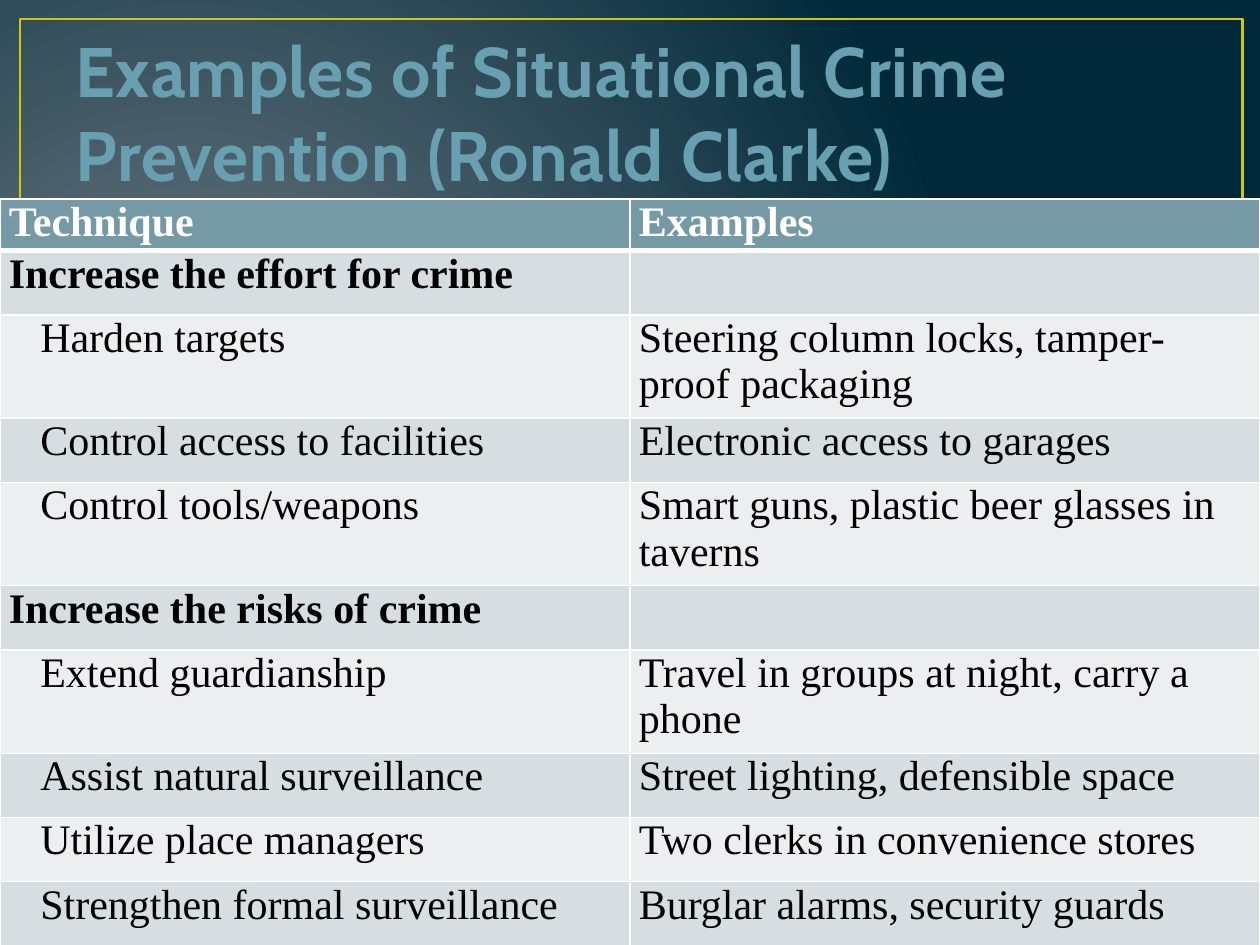
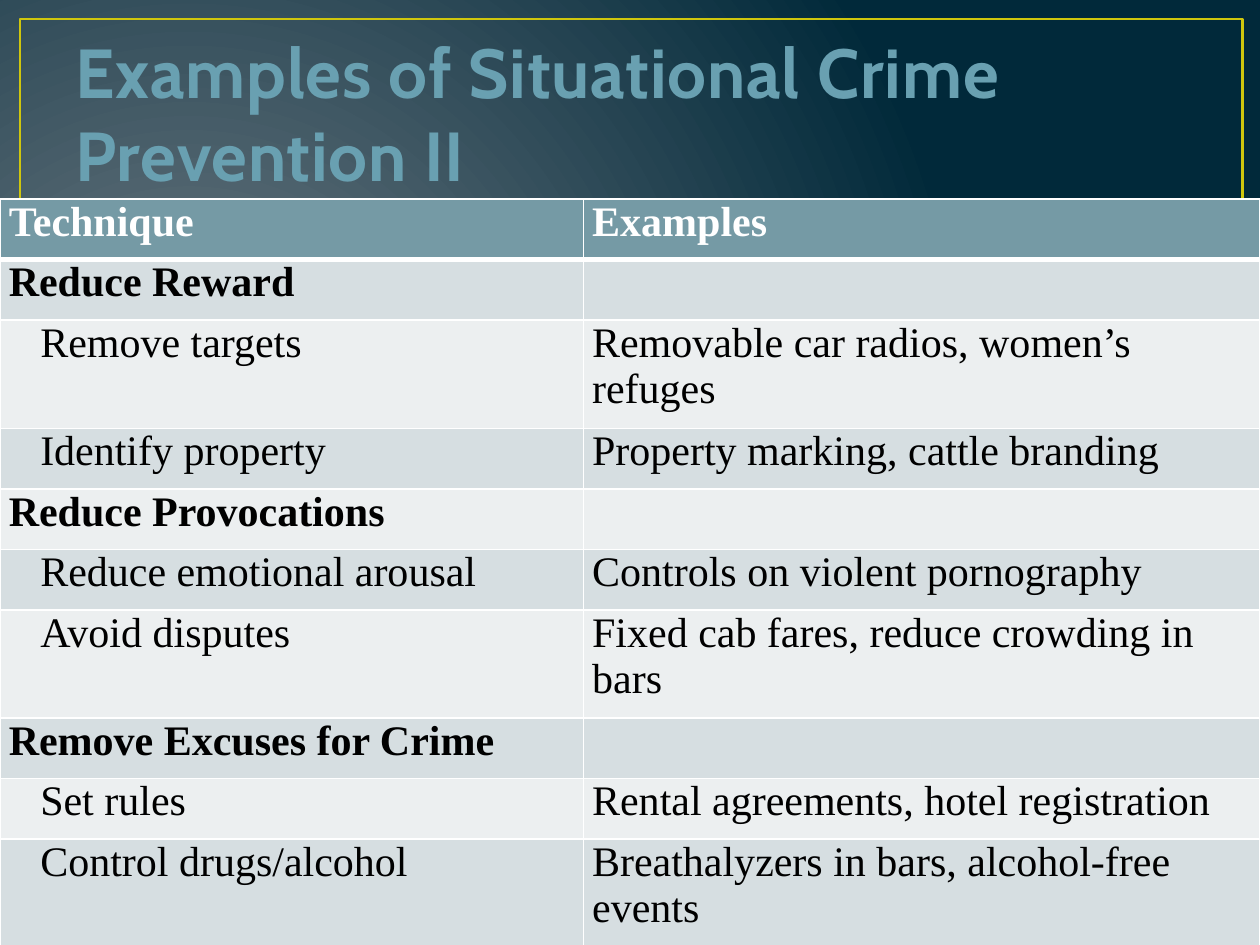
import dataclasses

import lxml.etree
import pptx
import pptx.dml.color
import pptx.enum.shapes
import pptx.enum.text
import pptx.oxml.ns
import pptx.util

Inches = pptx.util.Inches
Pt = pptx.util.Pt
qn = pptx.oxml.ns.qn

COLORS = {
    "glow": "717C84",
    "night": "01293A",
    "frame": "CFC60D",
    "title": "69A0B1",
    "title_edge": "384F55",
    "header": "759AA5",
    "band_dark": "D6DEE1",
    "band_light": "ECEFF0",
    "white": "FFFFFF",
    "black": "000000",
}
TITLE_FONT = "Cabin"
TABLE_FONT = "Times New Roman"
CELL_INSET = 0.07
TECHNIQUE_INDENT = 0.25


@dataclasses.dataclass(frozen=True)
class Technique:
    name: str
    example: str = ""
    tall: bool = False


@dataclasses.dataclass(frozen=True)
class TechniquePage:
    title: str
    title_size: float
    column_widths: tuple[float, float]
    header_height: float
    row_height: float
    tall_height: float
    techniques: tuple[Technique, ...]


PAGES = (
    TechniquePage(
        "Examples of Situational Crime Prevention (Ronald Clarke)",
        40, (5, 5), 0.41, 0.51, 0.82,
        (
            Technique("Increase the effort for crime"),
            Technique("Harden targets", "Steering column locks, tamper-proof packaging", True),
            Technique("Control access to facilities", "Electronic access to garages"),
            Technique("Control tools/weapons", "Smart guns, plastic beer glasses in taverns", True),
            Technique("Increase the risks of crime"),
            Technique("Extend guardianship", "Travel in groups at night, carry a phone", True),
            Technique("Assist natural surveillance", "Street lighting, defensible space"),
            Technique("Utilize place managers", "Two clerks in convenience stores"),
            Technique("Strengthen formal surveillance", "Burglar alarms, security guards"),
        ),
    ),
    TechniquePage(
        "Examples of Situational Crime Prevention II",
        39.6, (4.63, 5.37), 0.48, 0.48, 0.86,
        (
            Technique("Reduce Reward"),
            Technique("Remove targets", "Removable car radios, women’s refuges", True),
            Technique("Identify property", "Property marking, cattle branding"),
            Technique("Reduce Provocations"),
            Technique("Reduce emotional arousal", "Controls on violent pornography"),
            Technique("Avoid disputes", "Fixed cab fares, reduce crowding in bars", True),
            Technique("Remove Excuses for Crime"),
            Technique("Set rules", "Rental agreements, hotel registration"),
            Technique("Control drugs/alcohol", "Breathalyzers in bars, alcohol-free events", True),
        ),
    ),
)


def rgb(name: str) -> pptx.dml.color.RGBColor:
    return pptx.dml.color.RGBColor.from_string(COLORS[name])


def make_line(tag: str, color: str, width: float):
    line = lxml.etree.Element(qn(tag), w=str(int(Pt(width))))
    solid = lxml.etree.SubElement(line, qn("a:solidFill"))
    lxml.etree.SubElement(solid, qn("a:srgbClr"), val=COLORS[color])
    return line


def write_text(frame, text: str, *, font: str, size: float, color: str, bold: bool = False):
    span = frame.paragraphs[0].add_run()
    span.text = text
    span.font.name = font
    span.font.size = Pt(size)
    span.font.bold = bold
    span.font.color.rgb = rgb(color)
    return span


def paint_background(page) -> None:
    fill = page.background.fill
    fill.gradient()
    for stop, color in zip(fill.gradient_stops, ("glow", "night")):
        stop.color.rgb = rgb(color)
    gradient = page.element.find(".//" + qn("a:gradFill"))
    gradient.remove(gradient.find(qn("a:lin")))
    circle = lxml.etree.SubElement(gradient, qn("a:path"), path="circle")
    lxml.etree.SubElement(circle, qn("a:fillToRect"), l="15000", t="50000", r="85000", b="60000")


def add_frame(page) -> None:
    frame = page.shapes.add_shape(
        pptx.enum.shapes.MSO_SHAPE.RECTANGLE,
        Inches(0.16), Inches(0.15), Inches(9.7), Inches(7.2))
    frame.shadow.inherit = False
    frame.fill.background()
    frame.line.color.rgb = rgb("frame")
    frame.line.width = Pt(1.5)


def add_title(page, text: str, size: float) -> None:
    box = page.shapes.add_textbox(Inches(0.5), Inches(0.3), Inches(9), Inches(1.25))
    frame = box.text_frame
    frame.word_wrap = True
    frame.vertical_anchor = pptx.enum.text.MSO_ANCHOR.BOTTOM
    frame.margin_top = frame.margin_bottom = Inches(0)
    span = write_text(frame, text, font=TITLE_FONT, size=size, color="title", bold=True)
    properties = span.font.fill and span._r.get_or_add_rPr()
    properties.set("spc", "50")
    properties.insert(0, make_line("a:ln", "title_edge", 1.05))


def style_cell(cell, fill: str, top: float, bottom: float) -> None:
    properties = cell._tc.get_or_add_tcPr()
    for tag, width in (("a:lnL", 1), ("a:lnR", 1), ("a:lnT", top), ("a:lnB", bottom)):
        properties.append(make_line(tag, "white", width))
    cell.fill.solid()
    cell.fill.fore_color.rgb = rgb(fill)
    cell.margin_left = cell.margin_right = Inches(CELL_INSET)
    cell.margin_top = cell.margin_bottom = Inches(0)


def fill_row(table, index: int, technique: Technique) -> None:
    header = index == 0
    heading = header or not technique.example
    band = "header" if header else "band_dark" if index % 2 else "band_light"
    for column, text in enumerate((technique.name, technique.example)):
        cell = table.cell(index, column)
        style_cell(cell, band, 3 if index == 1 else 1, 3 if header else 1)
        if column == 0 and not heading:
            cell.margin_left = Inches(CELL_INSET + TECHNIQUE_INDENT)
        if text:
            write_text(cell.text_frame, text, font=TABLE_FONT, size=24,
                       color="white" if header else "black", bold=heading)


def add_technique_table(page, content: TechniquePage) -> None:
    rows = (Technique("Technique", "Examples"), *content.techniques)
    heights = [content.header_height] + [
        content.tall_height if technique.tall else content.row_height
        for technique in content.techniques]
    table = page.shapes.add_table(
        len(rows), 2, Inches(0), Inches(1.58), Inches(10), Inches(sum(heights))).table
    for column, width in zip(table.columns, content.column_widths):
        column.width = Inches(width)
    for index, (technique, height) in enumerate(zip(rows, heights)):
        table.rows[index].height = Inches(height)
        fill_row(table, index, technique)


def main() -> None:
    deck = pptx.Presentation()
    deck.slide_width = Inches(10)
    deck.slide_height = Inches(7.5)
    for content in PAGES:
        page = deck.slides.add_slide(deck.slide_layouts[6])
        paint_background(page)
        add_frame(page)
        add_title(page, content.title, content.title_size)
        add_technique_table(page, content)
    deck.save("out.pptx")


if __name__ == "__main__":
    main()
